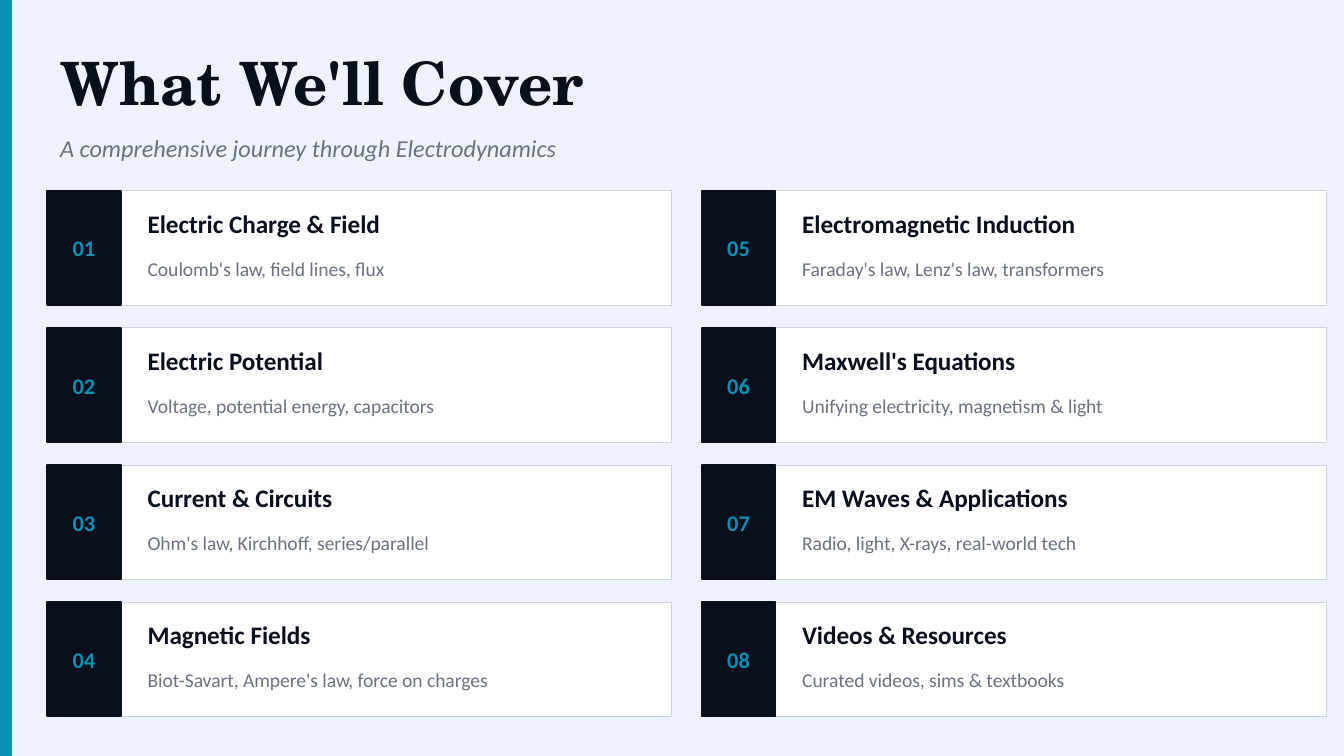
from dataclasses import dataclass

from pptx import Presentation
from pptx.dml.color import RGBColor
from pptx.enum.shapes import MSO_SHAPE
from pptx.enum.text import MSO_ANCHOR, MSO_AUTO_SIZE, PP_ALIGN
from pptx.util import Inches, Pt

RECT = MSO_SHAPE.RECTANGLE
MIDDLE = MSO_ANCHOR.MIDDLE
NO_FIT = MSO_AUTO_SIZE.NONE
LEFT, CENTER = PP_ALIGN.LEFT, PP_ALIGN.CENTER

WIDE = 10
HIGH = WIDE * 9 / 16
INK, TEAL, GRAY = "0A0F1E", "0891B2", "6B7280"
WHITE, EDGE, PALE = "FFFFFF", "D1D5DB", "EEF2FF"
BODY, SERIF = "Calibri", "TeX Gyre Schola"

# Card grid: first corner, card size and step between cards
ROWS = 4
X, Y = 0.35, 1.42
CARD_W, CARD_H = 4.65, 0.85
COL_STEP, ROW_STEP = 4.87, 1.02
TILE_W = 0.55


@dataclass
class Box:
    x: float
    y: float
    w: float
    h: float

    def inches(self) -> list:
        return [Inches(n) for n in (self.x, self.y, self.w, self.h)]


@dataclass
class Style:
    size: float
    color: str
    bold: bool = False
    italic: bool = False
    font: str = BODY


@dataclass
class Topic:
    title: str
    detail: str


HEAD = Style(32, INK, bold=True, font=SERIF)
LEAD = Style(13, GRAY, italic=True)
NUMBER = Style(12, TEAL, bold=True)
NAME = Style(13.5, INK, bold=True)
DETAIL = Style(10.5, GRAY)

TOPICS = [
    Topic("Electric Charge & Field", "Coulomb's law, field lines, flux"),
    Topic("Electric Potential", "Voltage, potential energy, capacitors"),
    Topic("Current & Circuits", "Ohm's law, Kirchhoff, series/parallel"),
    Topic("Magnetic Fields", "Biot-Savart, Ampere's law, force on charges"),
    Topic("Electromagnetic Induction", "Faraday's law, Lenz's law, transformers"),
    Topic("Maxwell's Equations", "Unifying electricity, magnetism & light"),
    Topic("EM Waves & Applications", "Radio, light, X-rays, real-world tech"),
    Topic("Videos & Resources", "Curated videos, sims & textbooks"),
]


def rgb(color: str) -> RGBColor:
    return RGBColor.from_string(color)


def write(shape, text: str, style: Style, align=LEFT) -> None:
    frame = shape.text_frame
    frame.text = text
    frame.word_wrap = True
    frame.auto_size = NO_FIT
    frame.vertical_anchor = MIDDLE
    para = frame.paragraphs[0]
    para.alignment = align
    font = para.runs[0].font
    font.name, font.size = style.font, Pt(style.size)
    font.bold, font.italic = style.bold, style.italic
    font.color.rgb = rgb(style.color)


def add_text(slide, box: Box, text: str, style: Style) -> None:
    write(slide.shapes.add_textbox(*box.inches()), text, style)


def add_rect(slide, box: Box, fill: str, line: str, width: float = 1):
    rect = slide.shapes.add_shape(RECT, *box.inches())
    rect.shadow.inherit = False
    rect.fill.solid()
    rect.fill.fore_color.rgb = rgb(fill)
    rect.line.color.rgb = rgb(line)
    rect.line.width = Pt(width)
    return rect


def add_card(slide, index: int, topic: Topic) -> None:
    col, row = divmod(index, ROWS)
    x, y = X + col * COL_STEP, Y + row * ROW_STEP
    add_rect(slide, Box(x, y, CARD_W, CARD_H), WHITE, EDGE, 0.5)
    tile = add_rect(slide, Box(x, y, TILE_W, CARD_H), INK, INK)
    write(tile, f"{index + 1:02}", NUMBER, CENTER)
    frame = tile.text_frame
    frame.margin_left = frame.margin_right = 0
    frame.margin_top = frame.margin_bottom = 0
    left, width = x + TILE_W + 0.1, CARD_W - 0.8
    add_text(slide, Box(left, y + 0.08, width, 0.32), topic.title, NAME)
    add_text(slide, Box(left, y + 0.44, width, 0.28), topic.detail, DETAIL)


def main() -> None:
    deck = Presentation()
    deck.slide_width, deck.slide_height = Inches(WIDE), Inches(HIGH)
    slide = deck.slides.add_slide(deck.slide_layouts.get_by_name("Title Only"))
    slide.background.fill.solid()
    slide.background.fill.fore_color.rgb = rgb(PALE)

    add_rect(slide, Box(0, 0, 0.08, HIGH), TEAL, TEAL)
    title = slide.shapes.title
    title.left, title.top, title.width, title.height = Box(X, 0.28, 9, 0.65).inches()
    write(title, "What We'll Cover", HEAD)
    add_text(slide, Box(X, 0.95, 8, 0.3),
             "A comprehensive journey through Electrodynamics", LEAD)
    for index, topic in enumerate(TOPICS):
        add_card(slide, index, topic)
    deck.save("out.pptx")


if __name__ == "__main__":
    main()
